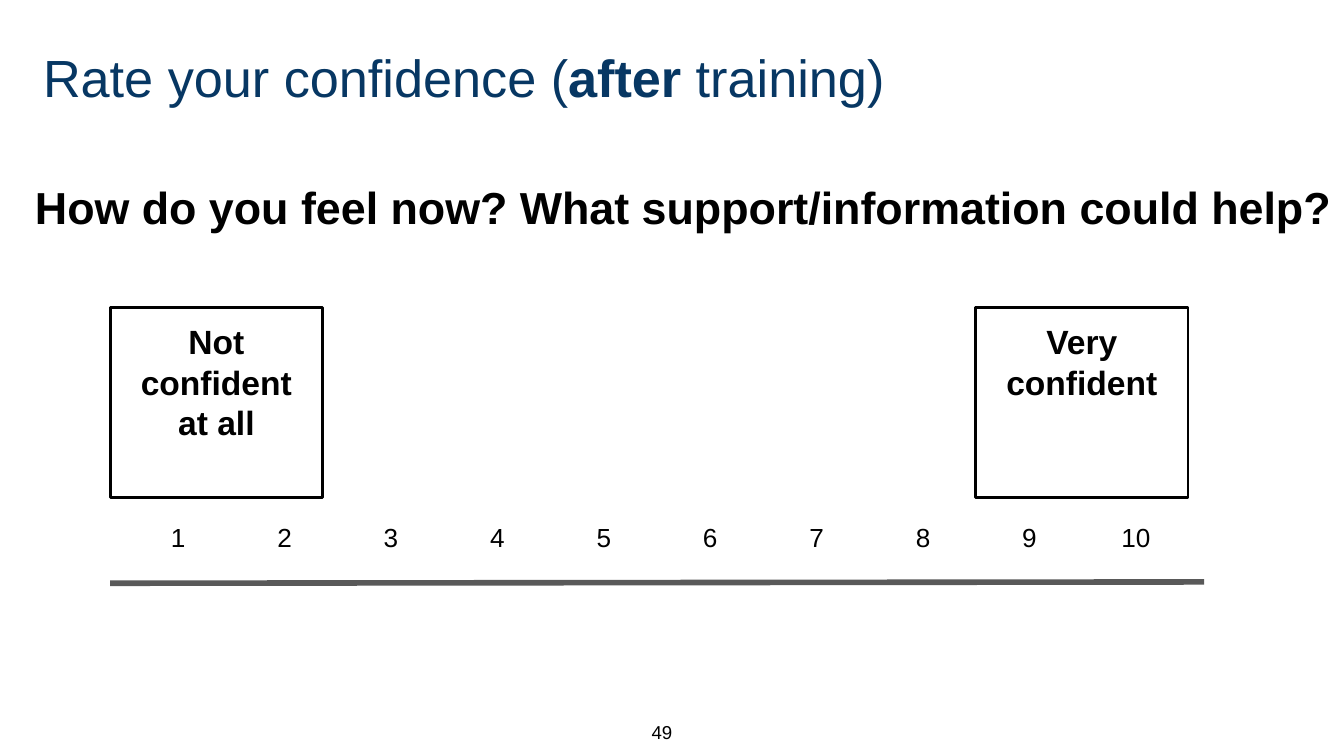
from pptx import Presentation
from pptx.dml.color import RGBColor
from pptx.enum import shapes, text
from pptx.oxml.ns import qn
from pptx.util import Inches, Pt

TITLE = [("Rate your confidence (", False), ("after", True), (" training)", False)]
QUESTION = "How do you feel now? What support/information could help?"
SCALE_ENDS = [("Not confident at all", 0.82), ("Very confident", 7.26)]
RATINGS = range(1, 11)
PAGE = "49"

THEME = {
    "font": "Arial",
    "navy": RGBColor(0x07, 0x37, 0x63),
    "black": RGBColor(0, 0, 0),
    "grey": RGBColor(0x59, 0x59, 0x59),
    "title": 28, "question": 24, "label": 18, "rating": 14, "page": 10,
}
ALIGN, ANCHOR = text.PP_ALIGN, text.MSO_ANCHOR


def box(left, top, width, height):
    return [Inches(v) for v in (left, top, width, height)]


def place(shape, *bounds):
    shape.left, shape.top, shape.width, shape.height = box(*bounds)


def set_margins(holder):
    holder.margin_left = holder.margin_right = Inches(0.1)
    holder.margin_top = holder.margin_bottom = Inches(0.1)


def set_frame(frame, anchor=ANCHOR.TOP):
    frame.word_wrap = True
    frame.auto_size = text.MSO_AUTO_SIZE.NONE
    frame.vertical_anchor = anchor
    set_margins(frame)


def style(paragraph, size, align, color="black", bold=False):
    paragraph.alignment = align
    for run in paragraph.runs:
        run.font.name = THEME["font"]
        run.font.size = Pt(THEME[size])
        run.font.color.rgb = THEME[color]
        run.font.bold = bold


prs = Presentation()
prs.slide_width = Inches(10)
prs.slide_height = prs.slide_width * 9 // 16
slide = prs.slides.add_slide(prs.slide_layouts[1])

title = slide.shapes.title
place(title, 0.22, 0.24, 9.36, 0.63)
set_frame(title.text_frame)
heading = title.text_frame.paragraphs[0]
for words, _ in TITLE:
    heading.add_run().text = words
style(heading, "title", ALIGN.LEFT, "navy")
for run, (_, bold) in zip(heading.runs, TITLE):
    run.font.bold = bold

body = slide.placeholders[1]
place(body, 0.16, 1.18, 9.88, 3.83)
body.text_frame.text = QUESTION
set_frame(body.text_frame)
question = body.text_frame.paragraphs[0]
style(question, "question", ALIGN.LEFT, bold=True)
question.line_spacing = 1.15
question.space_before = Pt(0)
properties = question._p.get_or_add_pPr()
properties.set("marL", "0")
properties.set("indent", "0")
properties.append(properties.makeelement(qn("a:buNone"), {}))

scale = slide.shapes.add_connector(
    shapes.MSO_CONNECTOR.STRAIGHT, *box(0.82, 4.34, 8.96, 4.33))
scale.line.color.rgb = THEME["grey"]
scale.line.width = Pt(3)
scale_properties = scale._element.spPr
scale_properties.append(scale_properties.makeelement(qn("a:effectLst"), {}))

for label, left in SCALE_ENDS:
    end = slide.shapes.add_shape(
        shapes.MSO_SHAPE.RECTANGLE, *box(left, 2.29, 1.58, 1.41))
    end.shadow.inherit = False
    end.fill.background()
    end.line.color.rgb = THEME["black"]
    end.line.width = Pt(1.5)
    end.text_frame.text = label
    set_frame(end.text_frame)
    style(end.text_frame.paragraphs[0], "label", ALIGN.CENTER, bold=True)

ratings = slide.shapes.add_table(
    1, len(RATINGS), *box(0.93, 3.8, 7.92, 0.42)).table
ratings.first_row = ratings.horz_banding = False
for cell, rating in zip(ratings.rows[0].cells, RATINGS):
    cell.fill.background()
    set_margins(cell)
    cell.text = str(rating)
    style(cell.text_frame.paragraphs[0], "rating", ALIGN.CENTER)

page = slide.shapes.add_textbox(*box(4.71, 5.26, 0.39, 0.37)).text_frame
page.text = PAGE
set_frame(page, ANCHOR.MIDDLE)
style(page.paragraphs[0], "page", ALIGN.RIGHT)

prs.save("out.pptx")
